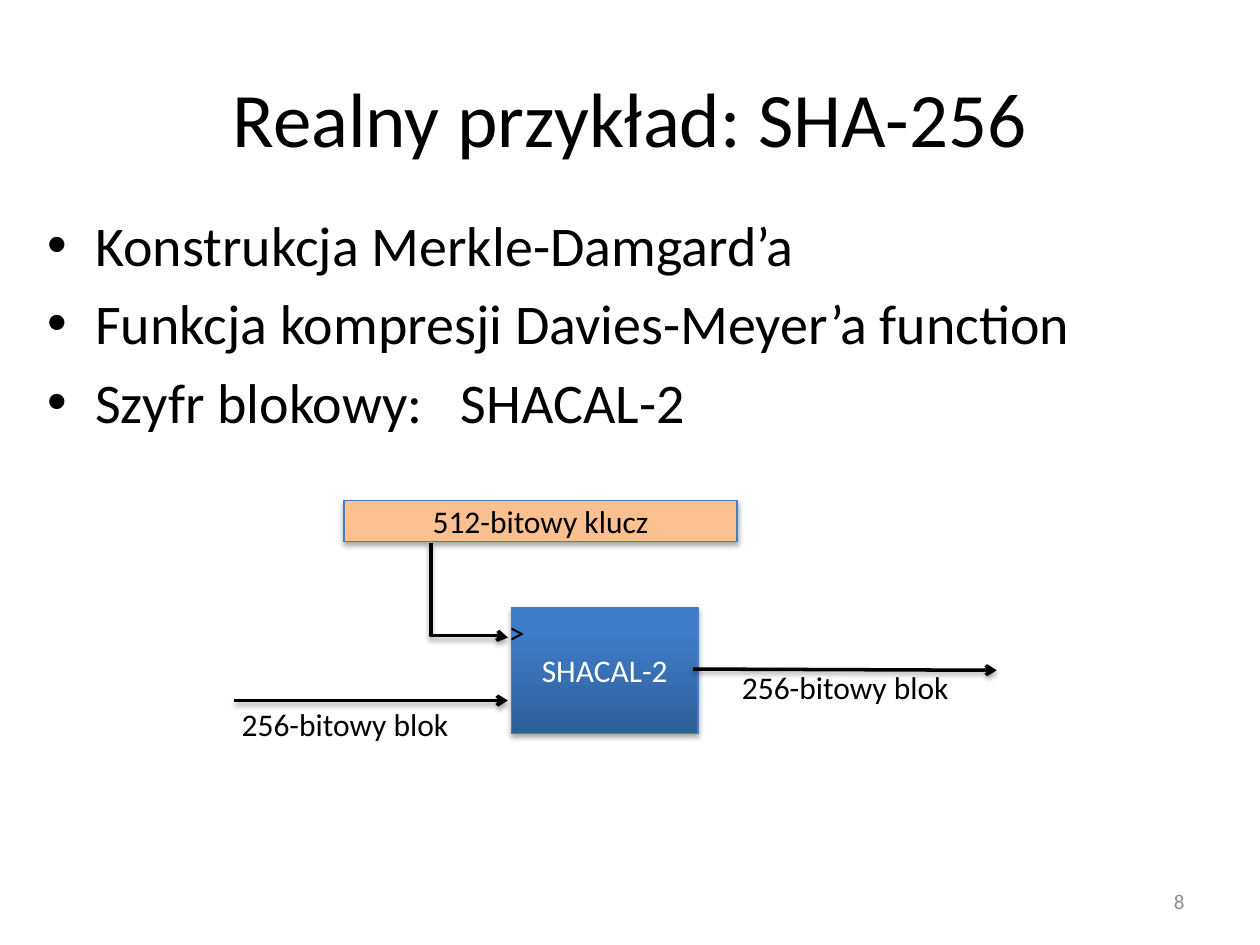
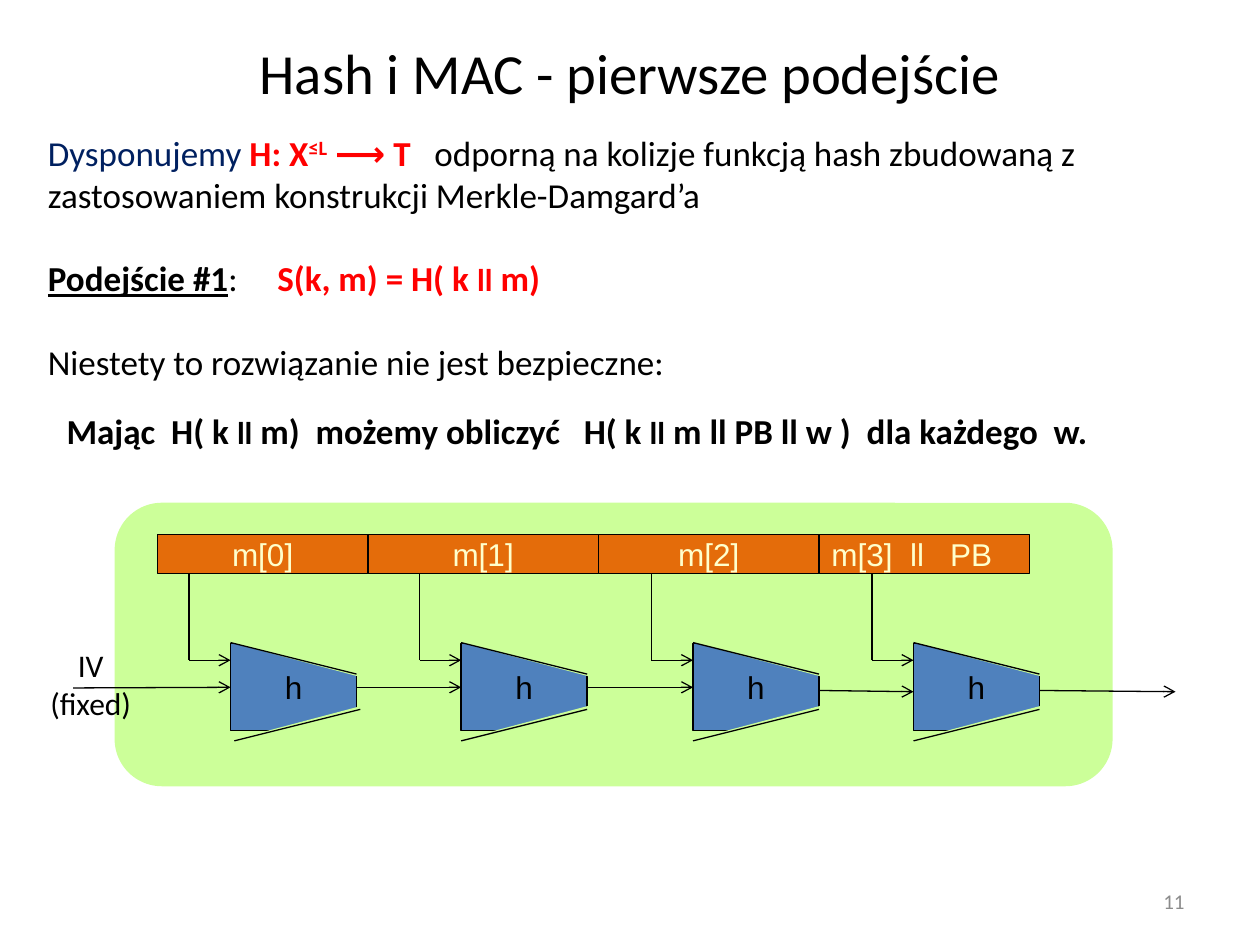
import pptx
import pptx.util
import pptx.oxml
import pptx.oxml.ns
import pptx.dml.color
import pptx.enum.dml
import pptx.enum.shapes
import pptx.enum.text

Inches, Pt = pptx.util.Inches, pptx.util.Pt
SHAPE = pptx.enum.shapes.MSO_SHAPE
CONNECTOR = pptx.enum.shapes.MSO_CONNECTOR
ALIGN = pptx.enum.text.PP_ALIGN
ANCHOR = pptx.enum.text.MSO_ANCHOR
AUTO_SIZE = pptx.enum.text.MSO_AUTO_SIZE
NS = pptx.oxml.ns.nsdecls("a")

COLORS = {
    name: pptx.dml.color.RGBColor.from_string(code)
    for name, code in {
        "black": "000000", "white": "FFFFFF", "gray": "8C8C8C", "red": "FF0000",
        "navy": "002060", "peach": "FAC090", "edge": "4B7EBC", "deep": "2F5F99",
        "bright": "3D7CC7", "lime": "CCFF99", "gate": "4F81BD", "orange": "E46C0A",
        "cream": "FFFFCC",
    }.items()
}
THEME = {
    "title": {"name": "Calibri", "size": Pt(44), "color": "black"},
    "small title": {"name": "Calibri", "size": Pt(32.4), "color": "black"},
    "list": {"name": "Calibri", "size": Pt(32), "color": "black"},
    "text": {"name": "Calibri", "size": Pt(20), "color": "black"},
    "label": {"name": "Calibri", "size": Pt(18), "color": "black"},
    "cipher": {"name": "Calibri", "size": Pt(18), "color": "white"},
    "gate": {"name": "Arial", "size": Pt(18), "color": "black"},
    "block": {"name": "Arial", "size": Pt(18), "color": "cream"},
    "number": {"name": "Calibri", "size": Pt(12), "color": "gray"},
}
SHADOW = (
    f'<a:effectLst {NS}><a:outerShdw blurRad="39400" dist="22900" dir="5400000" '
    'rotWithShape="0"><a:srgbClr val="000000"><a:alpha val="35000"/></a:srgbClr>'
    "</a:outerShdw></a:effectLst>"
)
NO_SHADOW = f"<a:effectLst {NS}/>"


def write(box, paragraphs, style, align=None, anchor=None, wrap=True):
    """Fill a shape with paragraphs, each a list of (text, changes to the style)."""
    frame = box.text_frame
    frame.auto_size = AUTO_SIZE.NONE
    frame.word_wrap = wrap
    if anchor is not None:
        frame.vertical_anchor = anchor
    for index, spans in enumerate(paragraphs):
        para = frame.add_paragraph() if index else frame.paragraphs[0]
        if align is not None:
            para.alignment = align
        for text, changes in spans:
            span = para.add_run()
            span.text = text
            for key, value in {**THEME[style], **changes}.items():
                if key == "color":
                    span.font.color.rgb = COLORS[value]
                elif key == "baseline":
                    span.font._element.set("baseline", str(value))
                else:
                    setattr(span.font, key, value)


def draw_wire(page, start, end, width=0.75, arrow=True, effects=NO_SHADOW,
              kind=CONNECTOR.STRAIGHT):
    wire = page.shapes.add_connector(kind, *map(Inches, (*start, *end)))
    wire.line.width = Pt(width)
    wire.line.color.rgb = COLORS["black"]
    if arrow:
        wire.line._get_or_add_ln().append(
            pptx.oxml.parse_xml(f'<a:tailEnd {NS} type="arrow"/>'))
    wire._element.spPr.append(pptx.oxml.parse_xml(effects))
    return wire


deck = pptx.Presentation()
deck.slide_width, deck.slide_height = Inches(10), Inches(7.5)

# Both pages: title, placed body and page number
pages = []
for title, style, title_height, body_place, number in [
    ("Realny przykład: SHA-256", "title", 1.25, (0.28, 1.62, 9.37, 4.48), "8"),
    ("Hash i MAC - pierwsze podejście", "small title", 0.54, (0.28, 0.99, 9.29, 2), "11"),
]:
    page = deck.slides.add_slide(deck.slide_layouts[1])
    heading, body = page.placeholders
    for box, place in ((heading, (0.5, 0.3, 9, title_height)), (body, body_place)):
        box.left, box.top, box.width, box.height = map(Inches, place)
    write(heading, [[(title, {})]], style, ALIGN.CENTER, ANCHOR.MIDDLE)
    box = page.shapes.add_textbox(*map(Inches, (7.17, 6.95, 2.33, 0.4)))
    write(box, [[(number, {})]], "number", ALIGN.RIGHT, ANCHOR.MIDDLE)
    pages.append((page, body))

# SHA-256: list and block cipher diagram
page, body = pages[0]
points = ["Konstrukcja Merkle-Damgard’a", "Funkcja kompresji Davies-Meyer’a function",
          "Szyfr blokowy:   SHACAL-2"]
write(body, [[(point, {})] for point in points], "list")

for text, style, place in [
    ("512-bitowy klucz", "label", (2.73, 3.97, 3.12, 0.33)),
    ("SHACAL-2", "cipher", (4.06, 4.82, 1.48, 1)),
]:
    box = page.shapes.add_shape(SHAPE.RECTANGLE, *map(Inches, place))
    if style == "cipher":
        box.fill.gradient()
        box.fill.gradient_angle = 90
        for stop, position, color in zip(box.fill.gradient_stops, (0, 0.8), ("deep", "bright")):
            stop.position = position
            stop.color.rgb = COLORS[color]
    else:
        box.fill.solid()
        box.fill.fore_color.rgb = COLORS["peach"]
    box.line.color.rgb = COLORS["edge"]
    box.line.width = Pt(0.75)
    box._element.spPr.append(pptx.oxml.parse_xml(SHADOW))
    write(box, [[(text, {})]], style, ALIGN.CENTER, ANCHOR.MIDDLE)

# The key wire leaves downward, so its elbow is turned by 270 degrees
key_wire = draw_wire(page, (4.1, 4.38), (3.35, 4.99), 2, effects=SHADOW, kind=CONNECTOR.ELBOW)
key_wire._element.spPr.xfrm.set("rot", "16200000")
key_wire._element.spPr.prstGeom.get_or_add_avLst().append(
    pptx.oxml.parse_xml(f'<a:gd {NS} name="adj1" fmla="val 98100"/>'))
draw_wire(page, (1.86, 5.56), (4.03, 5.56), 2, effects=SHADOW)
draw_wire(page, (5.5, 5.31), (7.91, 5.32), 2, effects=SHADOW)

for text, place in [
    (">", (3.94, 4.82, 0.34, 0.4)),
    ("256-bitowy blok", (1.82, 5.55, 1.86, 0.4)),
    ("256-bitowy blok", (5.79, 5.25, 1.86, 0.4)),
]:
    box = page.shapes.add_textbox(*map(Inches, place))
    write(box, [[(text, {})]], "label", wrap=False)

# Hash and MAC: text
page, body = pages[1]
bold, small = {"bold": True}, {"bold": True, "size": Pt(18)}
red = {"bold": True, "color": "red"}
write(body, [
    [("Dysponujemy ", {"color": "navy"}), ("H: X", red), ("≤L", {**red, "baseline": 30000}),
     (" ⟶ T   ", red),
     ("odporną na kolizje funkcją hash zbudowaną z zastosowaniem konstrukcji "
      "Merkle-Damgard’a", {})],
    [("Podejście #1", {"bold": True, "underline": True}), (":     ", {}),
     ("S(k, m) = H( k ", red), ("ll", {**red, "size": Pt(18)}), (" m)", red)],
    [("Niestety to rozwiązanie nie jest bezpieczne:", {})],
], "text")
for para in body.text_frame.paragraphs:
    properties = para._p.get_or_add_pPr()
    properties.set("marL", "0")
    properties.set("indent", "0")
    properties.append(pptx.oxml.parse_xml(f"<a:buNone {NS}/>"))
for para in body.text_frame.paragraphs[1:]:
    para.space_before = Pt(23.8)

box = page.shapes.add_textbox(*map(Inches, (0.43, 3.2, 8.36, 0.44)))
write(box, [[("Mając  H( k ", bold), ("ll", small), (" m)  możemy obliczyć   H( k ", bold),
             ("ll", small), (" m ll PB ll w )  dla każdego  w.", bold)]], "text", wrap=False)

# Hash chain: panel, message blocks and compression gates
panel = page.shapes.add_shape(SHAPE.ROUNDED_RECTANGLE, *map(Inches, (0.91, 3.99, 7.92, 2.25)))
panel.shadow.inherit = False
panel.fill.solid()
panel.fill.fore_color.rgb = COLORS["lime"]
panel.line.fill.background()

gate_lefts = [1.83, 3.66, 5.5, 7.25]
block_edges = [1.25, 2.92, 4.75, 6.5, 8.17]
block_texts = ["m[0]", "m[1]", "m[2]", "m[3]  ll   PB"]
cells = [("h", "gate", "gate", (left, 5.11, 1, 0.69)) for left in gate_lefts]
cells += [(text, "block", "orange", (left, 4.24, right - left, 0.31))
          for text, left, right in zip(block_texts, block_edges, block_edges[1:])]
gates = []
for text, style, color, place in cells:
    box = page.shapes.add_shape(SHAPE.RECTANGLE, *map(Inches, place))
    box.shadow.inherit = False
    box.fill.solid()
    box.fill.fore_color.rgb = COLORS[color]
    box.line.color.rgb = COLORS["black"]
    box.line.width = Pt(0.75)
    align = ALIGN.LEFT if "PB" in text else ALIGN.CENTER
    write(box, [[(text, {})]], style, align, ANCHOR.MIDDLE, wrap=False)
    if style == "gate":
        gates.append(box)

# Wires along the chain
draw_wire(page, (0.58, 5.46), (1.83, 5.46)).end_connect(gates[0], 1)
for index in (0, 1):
    wire = draw_wire(page, (gate_lefts[index] + 1, 5.46), (gate_lefts[index + 1], 5.46))
    wire.begin_connect(gates[index], 3)
    wire.end_connect(gates[index + 1], 1)
for start, end in ((6.5, 7.25), (8.25, 9.33)):
    draw_wire(page, (start, 5.48), (end, 5.49))
box = page.shapes.add_textbox(*map(Inches, (0.29, 5.08, 0.86, 0.71)))
write(box, [[("IV", {})], [("(fixed)", {})]], "label", ALIGN.CENTER, wrap=False)

# Wires from the blocks, and corners cut off each gate
for left in gate_lefts:
    drop = left - 0.33
    draw_wire(page, (drop, 4.55), (drop, 5.24), arrow=False)
    draw_wire(page, (drop, 5.24), (left, 5.24))
    low_left = 1.86 if left == gate_lefts[0] else left
    for corner_left, top, flips, outer, inner in [
        (left, 5.1, ("flipH", "flipV"), 5.1, 5.35),
        (low_left, 5.56, ("flipH",), 5.88, 5.63),
    ]:
        corner = page.shapes.add_shape(
            SHAPE.RIGHT_TRIANGLE, *map(Inches, (corner_left, top, 1.17, 0.31)))
        corner.shadow.inherit = False
        corner.fill.solid()
        corner.fill.fore_color.rgb = COLORS["lime"]
        corner.line.fill.background()
        for flip in flips:
            corner._element.spPr.xfrm.set(flip, "1")
        draw_wire(page, (corner_left, outer), (corner_left + 1, inner), arrow=False)

deck.save("out.pptx")
